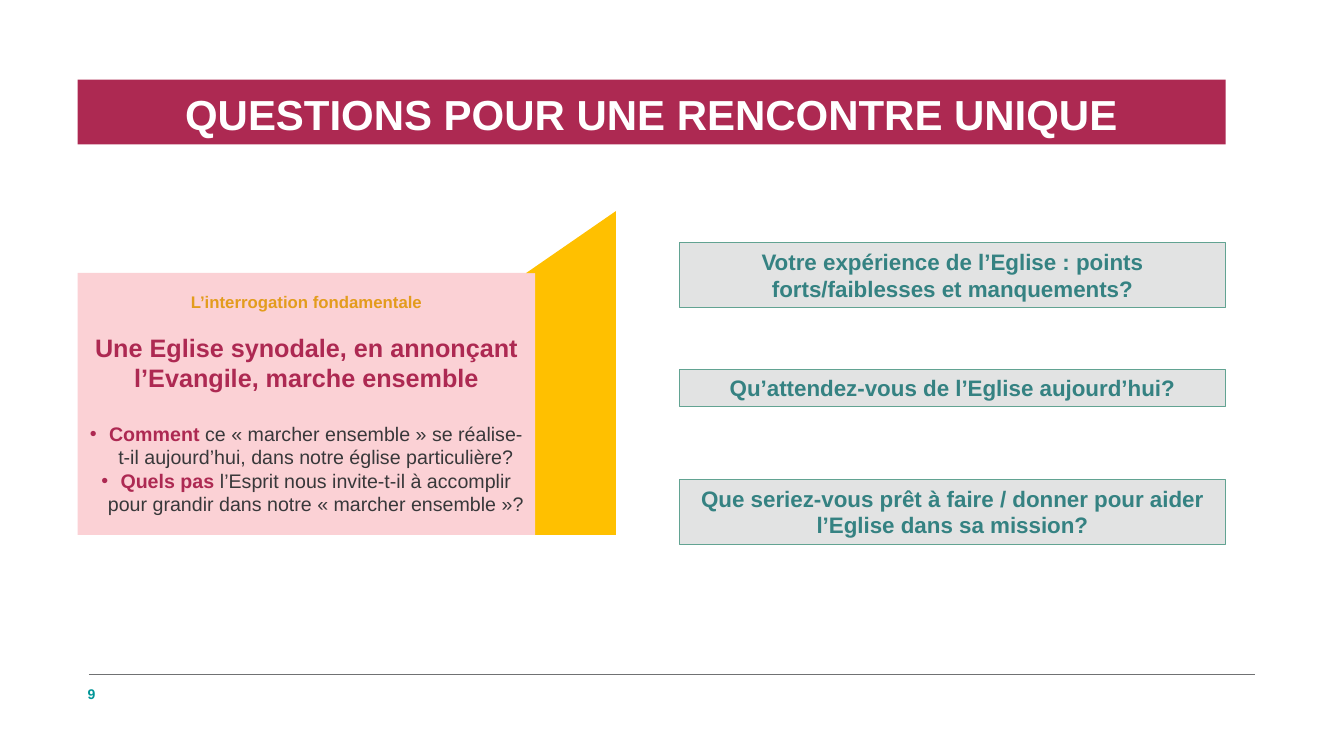
from collections import namedtuple

from lxml.etree import SubElement
from pptx import Presentation
from pptx.dml.color import RGBColor
from pptx.enum.shapes import MSO_CONNECTOR, MSO_SHAPE
from pptx.enum.text import MSO_ANCHOR, PP_ALIGN
from pptx.oxml.ns import qn
from pptx.util import Cm, Pt

CRIMSON = RGBColor(0xAD, 0x29, 0x52)
WHITE = RGBColor(0xFF, 0xFF, 0xFF)
PINK = RGBColor(0xFB, 0xD1, 0xD5)
AMBER = RGBColor(0xE3, 0x9C, 0x1D)
YELLOW = RGBColor(0xFF, 0xC0, 0x00)
PALE_GREY = RGBColor(0xE2, 0xE3, 0xE3)
GREEN = RGBColor(0x62, 0xA3, 0x92)
TEAL = RGBColor(0x35, 0x82, 0x82)
BRIGHT_TEAL = RGBColor(0x00, 0x95, 0x97)
CHARCOAL = RGBColor(0x38, 0x38, 0x3A)
RULE_GREY = RGBColor(0x70, 0x71, 0x73)

Box = namedtuple("Box", "left top width height")

LEFT = 1.96
PANEL_TOP = 6.88
QUESTIONS = [
    ("Votre expérience de l’Eglise : points forts/faiblesses et manquements?", 6.12, 1.63),
    ("Qu’attendez-vous de l’Eglise aujourd’hui?", 9.3, 0.94),
    ("Que seriez-vous prêt à faire / donner pour aider l’Eglise dans sa mission?", 12.09, 1.63),
]
PROMPTS = [
    ("Comment ", "ce « marcher ensemble » se réalise-t-il aujourd’hui, dans notre église particulière?"),
    ("Quels pas ", "l’Esprit nous invite-t-il à accomplir pour grandir dans notre « marcher ensemble »?"),
]


def add_block(page, box, fill, kind=MSO_SHAPE.RECTANGLE, line=None, anchor=MSO_ANCHOR.TOP):
    block = page.shapes.add_shape(kind, *map(Cm, box))
    block.shadow.inherit = False
    block.fill.solid()
    block.fill.fore_color.rgb = fill
    if line is None:
        block.line.fill.background()
    else:
        block.line.color.rgb = line
        block.line.width = Pt(0.75)
    block.text_frame.word_wrap = True
    block.text_frame.vertical_anchor = anchor
    return block


def add_para(frame, first=False, align=PP_ALIGN.CENTER, before=0, bullet=False):
    para = frame.paragraphs[0] if first else frame.add_paragraph()
    para.alignment = align
    para.space_before = Pt(before)
    if bullet:
        properties = para._p.get_or_add_pPr()
        properties.set("marL", str(Cm(0.48)))
        properties.set("indent", str(Cm(-0.48)))
        SubElement(properties, qn("a:buFont"), typeface="Arial")
        SubElement(properties, qn("a:buChar"), char="•")
    return para


def add_span(para, text, size, color, bold=True):
    span = para.add_run()
    span.text = text
    span.font.name = "Arial"
    span.font.size = Pt(size)
    span.font.bold = bold
    span.font.color.rgb = color


def add_title(page, box):
    banner = add_block(page, box, CRIMSON, anchor=MSO_ANCHOR.BOTTOM)
    para = add_para(banner.text_frame, first=True)
    para.line_spacing = 0.85
    add_span(para, "QUESTIONS POUR UNE RENCONTRE UNIQUE", 30, WHITE)


def add_question(page, box, text):
    frame = add_block(page, box, PALE_GREY, line=GREEN).text_frame
    add_span(add_para(frame, first=True), text, 16, TEAL)


def add_fundamental_panel(page, box):
    side_width, overlap = 3.3, 1.27
    right = box.left + box.width + side_width - overlap
    add_block(page, Box(right - side_width, box.top, side_width, box.height),
              YELLOW, MSO_SHAPE.FLOWCHART_PROCESS)

    frame = add_block(page, box, PINK, anchor=MSO_ANCHOR.MIDDLE).text_frame
    add_span(add_para(frame, first=True), "L’interrogation fondamentale", 12, AMBER)
    add_span(add_para(frame, before=14),
             "Une Eglise synodale, en annonçant l’Evangile, marche ensemble", 18, CRIMSON)
    for index, (lead, rest) in enumerate(PROMPTS):
        para = add_para(frame, before=0 if index else 21, bullet=True)
        add_span(para, lead, 14, CRIMSON)
        add_span(para, rest, 14, CHARCOAL, bold=False)

    rise, run = 1.56, 2.26
    center_x, center_y = right - run / 2, box.top - rise / 2
    peak = add_block(page, Box(center_x - rise / 2, center_y - run / 2, rise, run),
                     YELLOW, MSO_SHAPE.RIGHT_TRIANGLE)
    peak.rotation = 270


def add_footer(page, box):
    rule = page.shapes.add_connector(
        MSO_CONNECTOR.STRAIGHT, Cm(box.left + 0.28), Cm(box.top),
        Cm(box.left + box.width), Cm(box.top))
    rule.line.color.rgb = RULE_GREY
    rule.line.width = Pt(0.5)
    SubElement(rule._element.spPr, qn("a:effectLst"))

    number = page.shapes.add_textbox(Cm(box.left), Cm(box.top + 0.15), Cm(1.5), Cm(box.height - 0.15))
    number.text_frame.word_wrap = True
    number.text_frame.vertical_anchor = MSO_ANCHOR.MIDDLE
    add_span(add_para(number.text_frame, first=True, align=PP_ALIGN.LEFT), "9", 10, BRIGHT_TEAL)


def main():
    deck = Presentation()
    deck.slide_width, deck.slide_height = Cm(33.87), Cm(19.05)
    page = deck.slides.add_slide(deck.slide_layouts[6])
    add_footer(page, Box(LEFT, 16.99, 29.66, 0.86))
    add_title(page, Box(LEFT, 2.01, 28.93, 1.63))
    for text, top, height in QUESTIONS:
        add_question(page, Box(17.12, top, 13.77, height), text)
    add_fundamental_panel(page, Box(LEFT, PANEL_TOP, 11.53, 6.6))
    deck.save("out.pptx")


if __name__ == "__main__":
    main()
